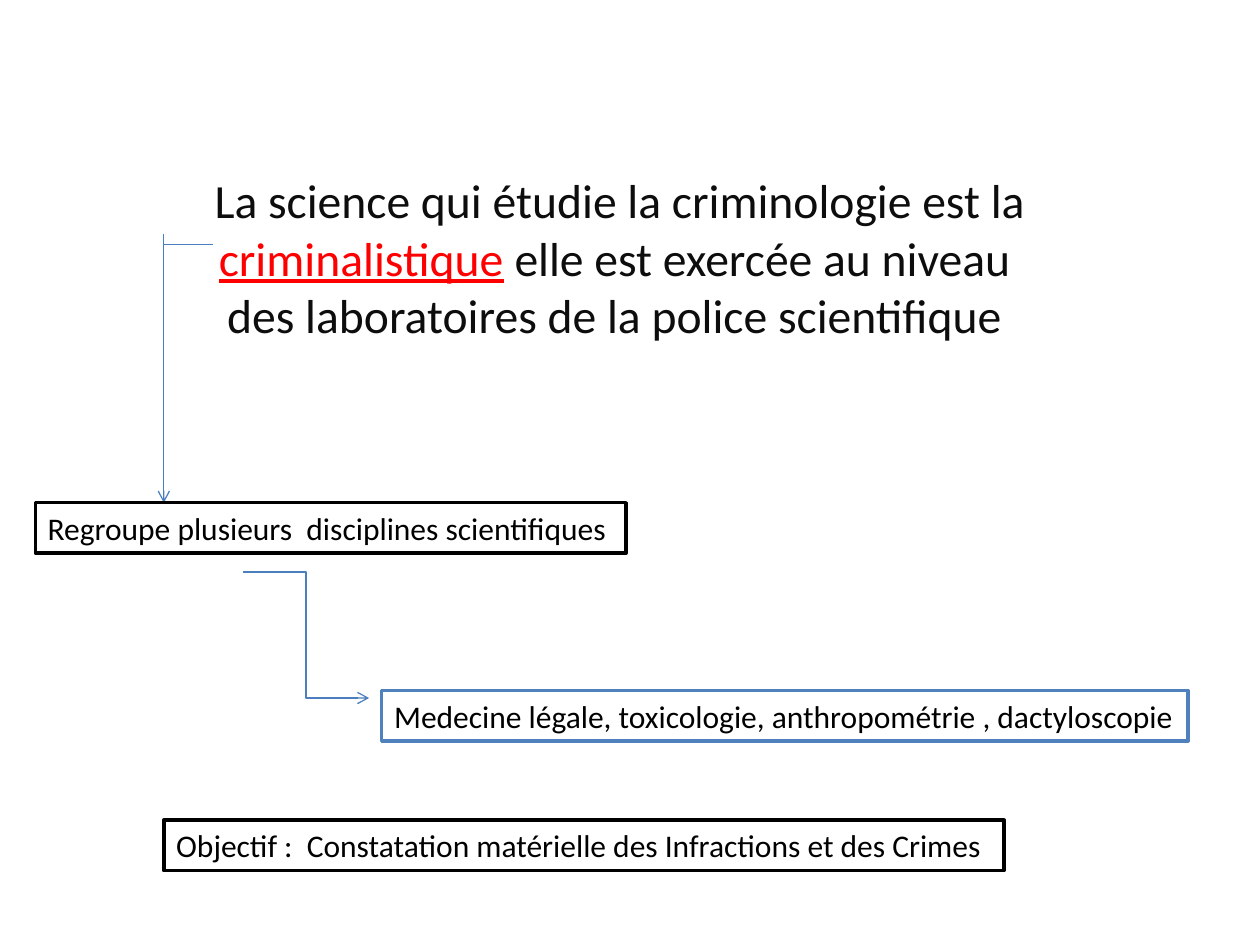
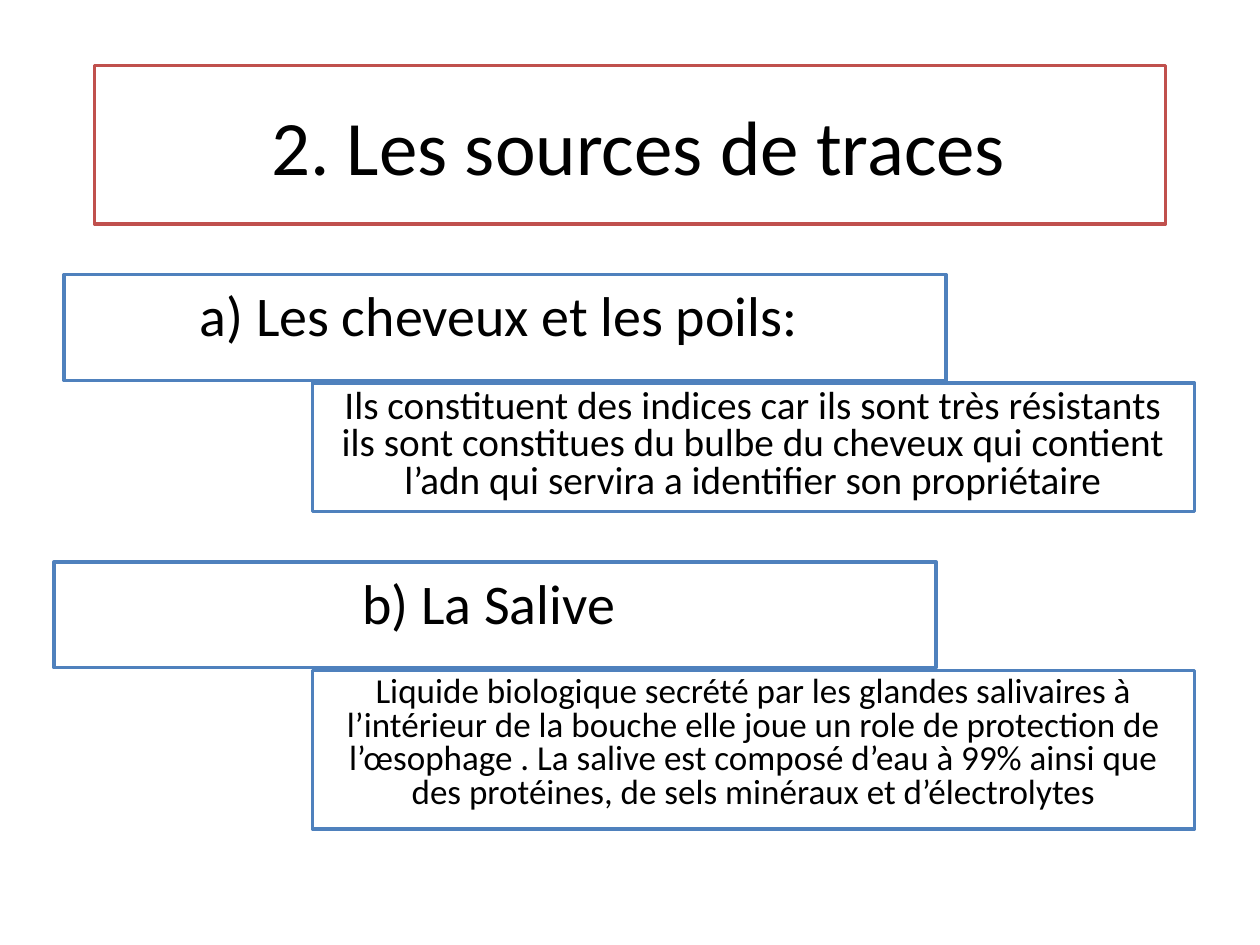
from dataclasses import dataclass

from lxml import etree
from pptx import Presentation
from pptx.dml.color import RGBColor
from pptx.enum.shapes import MSO_CONNECTOR, MSO_SHAPE
from pptx.enum.text import MSO_ANCHOR, PP_ALIGN
from pptx.oxml.ns import qn
from pptx.slide import Slide
from pptx.text.text import TextFrame
from pptx.util import Inches, Pt

STRAIGHT, ELBOW = MSO_CONNECTOR.STRAIGHT, MSO_CONNECTOR.ELBOW
RECTANGLE = MSO_SHAPE.RECTANGLE
TOP, MIDDLE = MSO_ANCHOR.TOP, MSO_ANCHOR.MIDDLE
LEFT, CENTER = PP_ALIGN.LEFT, PP_ALIGN.CENTER


@dataclass(frozen=True)
class Theme:
    font: str = "Calibri"
    white: RGBColor = RGBColor(0xFF, 0xFF, 0xFF)
    black: RGBColor = RGBColor(0, 0, 0)
    ink: RGBColor = RGBColor(0x0D, 0x0D, 0x0D)
    keyword: RGBColor = RGBColor(0xFF, 0, 0)
    blue: RGBColor = RGBColor(0x4F, 0x81, 0xBD)
    red: RGBColor = RGBColor(0xC0, 0x50, 0x4D)
    arrow: RGBColor = RGBColor(0x4B, 0x7E, 0xBC)
    title: float = 44
    heading: float = 32
    intro: float = 27.2
    label: float = 18
    border: float = 2
    thin: float = 0.75


THEME = Theme()


@dataclass(frozen=True)
class Span:
    text: str
    color: RGBColor = THEME.black
    underline: bool = False


@dataclass(frozen=True)
class Panel:
    """A bordered rectangle with one paragraph of text."""
    left: float
    top: float
    width: float
    height: float
    text: str
    size: float
    border: RGBColor = THEME.blue
    align: PP_ALIGN = CENTER
    anchor: MSO_ANCHOR = TOP
    wrap: bool = True
    line_spacing: float = 1.0


@dataclass(frozen=True)
class Link:
    start: tuple[float, float]
    end: tuple[float, float]
    kind: MSO_CONNECTOR = STRAIGHT
    arrow: bool = True


@dataclass(frozen=True)
class Source:
    """A kind of trace: its heading and the description below it."""
    heading: str
    description: str
    left: float
    top: float
    description_height: float
    description_size: float


def write_text(frame: TextFrame, spans: list[Span], size: float,
               align: PP_ALIGN, line_spacing: float = 1.0) -> None:
    para = frame.paragraphs[0]
    para.alignment = align
    para.line_spacing = line_spacing
    for span in spans:
        run = para.add_run()
        run.text = span.text
        run.font.name = THEME.font
        run.font.size = Pt(size)
        run.font.color.rgb = span.color
        run.font.underline = span.underline


def draw_panel(page: Slide, panel: Panel) -> None:
    area = [Inches(v) for v in (panel.left, panel.top, panel.width, panel.height)]
    if panel.wrap:
        box = page.shapes.add_shape(RECTANGLE, *area)
        box.shadow.inherit = False
    else:
        box = page.shapes.add_textbox(*area)
    box.fill.solid()
    box.fill.fore_color.rgb = THEME.white
    box.line.color.rgb = panel.border
    box.line.width = Pt(THEME.border)
    frame = box.text_frame
    frame.word_wrap = panel.wrap
    frame.vertical_anchor = panel.anchor
    write_text(frame, [Span(panel.text)], panel.size, panel.align, panel.line_spacing)


def draw_link(page: Slide, link: Link) -> None:
    points = [Inches(v) for v in (*link.start, *link.end)]
    connector = page.shapes.add_connector(link.kind, *points)
    connector.line.color.rgb = THEME.arrow
    connector.line.width = Pt(THEME.thin)
    if link.arrow:
        outline = connector.line._get_or_add_ln()
        etree.SubElement(outline, qn("a:tailEnd"), type="arrow")
    etree.SubElement(connector._element.spPr, qn("a:effectLst"))


def draw_introduction(page: Slide) -> None:
    box = page.shapes.add_textbox(Inches(1.38), Inches(0.76), Inches(7), Inches(1.92))
    frame = box.text_frame
    frame.word_wrap = True
    frame.margin_top = Inches(0.6)
    spans = [
        Span(" La science qui étudie la criminologie est la ", THEME.ink),
        Span("criminalistique", THEME.keyword, underline=True),
        Span(" elle est exercée au niveau des laboratoires de la police scientifique",
             THEME.ink),
    ]
    write_text(frame, spans, THEME.intro, CENTER)


def build_criminalistics(page: Slide) -> None:
    draw_introduction(page)
    stem = 1.3
    links = [
        Link((stem, 1.86), (stem, 3.99)),
        Link((stem, 1.94), (1.69, 1.94), arrow=False),
        Link((1.93, 4.54), (2.93, 5.54), ELBOW),
    ]
    for link in links:
        draw_link(page, link)
    labels = [
        (0.28, 3.99, 4.69, THEME.black, "Regroupe plusieurs  disciplines scientifiques "),
        (3.03, 5.48, 6.4, THEME.blue,
         "Medecine légale, toxicologie, anthropométrie , dactyloscopie"),
        (stem, 6.51, 6.67, THEME.black,
         "Objectif :  Constatation matérielle des Infractions et des Crimes "),
    ]
    for left, top, width, border, text in labels:
        draw_panel(page, Panel(left, top, width, 0.4, text, THEME.label, border,
                               align=LEFT, wrap=False))


def draw_source(page: Slide, source: Source) -> None:
    width, heading_height, gap = 7, 0.84, 0.02
    draw_panel(page, Panel(source.left, source.top, width, heading_height,
                           source.heading, THEME.heading))
    draw_panel(page, Panel(2.48, source.top + heading_height + gap, width,
                           source.description_height, source.description,
                           source.description_size, line_spacing=0.8))


def build_trace_sources(page: Slide) -> None:
    draw_panel(page, Panel(0.75, 0.52, 8.5, 1.26, " 2. Les sources de traces",
                           THEME.title, THEME.red, anchor=MIDDLE))
    sources = [
        Source("a) Les cheveux et les poils: ",
               "Ils constituent des indices car ils sont très résistants ils sont "
               "constitues du bulbe du cheveux qui contient l’adn qui servira a "
               "identifier son propriétaire",
               0.51, 2.18, 1.02, 22.4),
        Source("b) La Salive ",
               "Liquide biologique secrété par les glandes salivaires à l’intérieur "
               "de la bouche elle joue un role de protection de l’œsophage . La salive "
               "est composé d’eau à 99% ainsi que des protéines, de sels minéraux et "
               "d’électrolytes",
               0.43, 4.46, 1.26, 20),
    ]
    for source in sources:
        draw_source(page, source)


def main() -> None:
    deck = Presentation()
    deck.slide_width, deck.slide_height = Inches(10), Inches(7.5)
    blank = deck.slide_layouts[6]
    for build in (build_criminalistics, build_trace_sources):
        build(deck.slides.add_slide(blank))
    deck.save("out.pptx")


if __name__ == "__main__":
    main()
